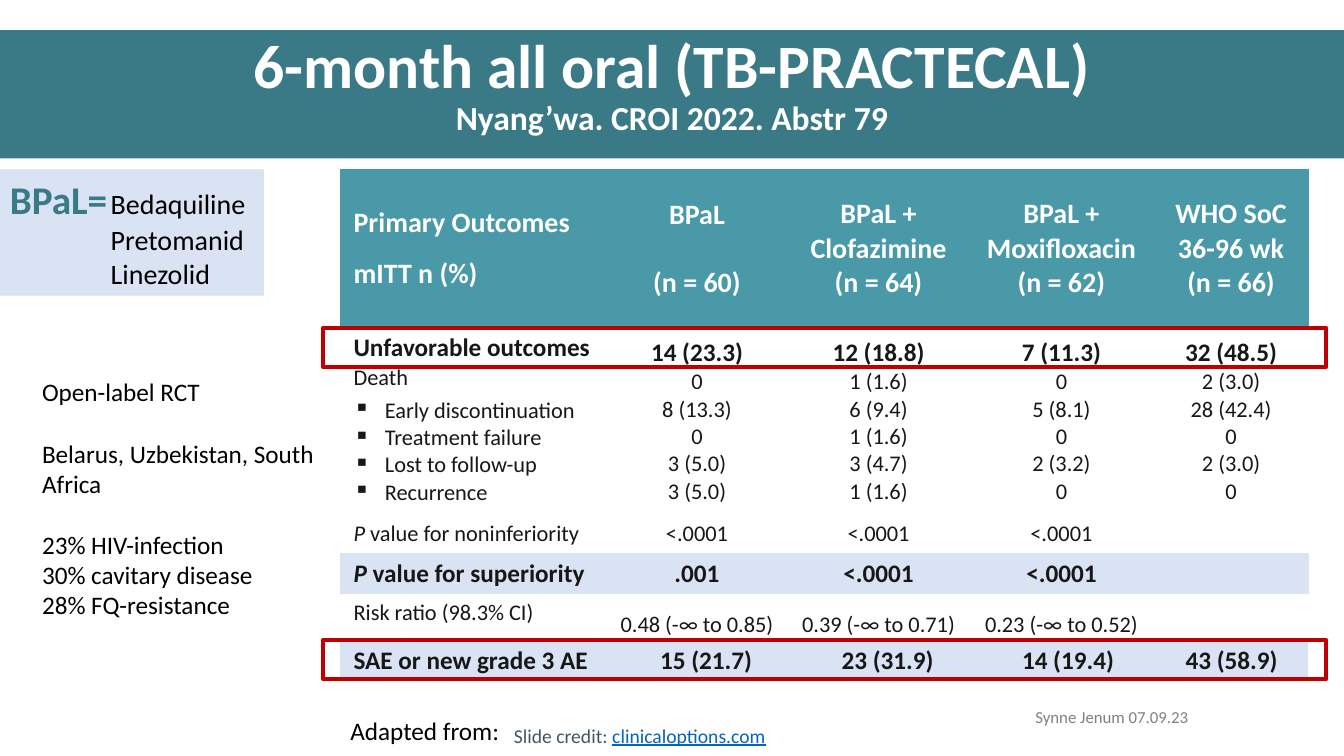
import pptx
import pptx.util
import pptx.dml.color
import pptx.enum.shapes
import pptx.enum.text
from lxml import etree
from pptx.util import Cm, Pt

ALIGN = pptx.enum.text.PP_ALIGN
ANCHOR = pptx.enum.text.MSO_ANCHOR
RECTANGLE = pptx.enum.shapes.MSO_SHAPE.RECTANGLE
COLORS = {
    "banner": "3A7986", "header": "4999A9", "band": "DAE3F3", "frame": "C00000",
    "white": "FFFFFF", "black": "000000", "ink": "181717", "slate": "455560",
    "link": "0563C1", "grey": "808080",
}
NO_TABLE_STYLE = "{2D5ABB26-0587-4C30-8999-92F81FD0307C}"


def rgb(name):
    return pptx.dml.color.RGBColor.from_string(COLORS[name])


def add_property(paragraph, tag, **attributes):
    return etree.SubElement(paragraph._p.get_or_add_pPr(), pptx.oxml.ns.qn(tag), attributes)


def set_bullet(paragraph):
    properties = paragraph._p.get_or_add_pPr()
    properties.set("marL", str(Cm(0.79)))
    properties.set("indent", str(-Cm(0.79)))
    add_property(paragraph, "a:buChar", char="▪")


def set_tab(paragraph, position):
    tabs = add_property(paragraph, "a:tabLst")
    etree.SubElement(tabs, pptx.oxml.ns.qn("a:tab"), pos=str(position), algn="l")


class OutcomeSlide:
    font = "Calibri"

    def __init__(self, presentation):
        self.slide = presentation.slides.add_slide(presentation.slide_layouts[6])

    def add_lines(self, frame, lines, align=ALIGN.LEFT, gaps=None, **style):
        """Each line is a string or a list of (text, style changes); gaps maps line index to points before."""
        for index, line in enumerate(lines):
            paragraph = frame.paragraphs[0] if index == 0 else frame.add_paragraph()
            paragraph.alignment = align
            if gaps and index in gaps:
                paragraph.space_before = Pt(gaps[index])
            for text, changes in [(line, {})] if isinstance(line, str) else line:
                run = paragraph.add_run()
                run.text = text
                self.format_run(run, **{**style, **changes})

    def format_run(self, run, size, color, bold=False, italic=False, underline=False):
        run.font.name = self.font
        run.font.size = Pt(size)
        run.font.color.rgb = rgb(color)
        run.font.bold = bold
        run.font.italic = italic
        run.font.underline = underline

    def text(self, place, lines, wrap=True, anchor=ANCHOR.TOP, **style):
        frame = self.slide.shapes.add_textbox(*map(Cm, place)).text_frame
        frame.word_wrap = wrap
        frame.vertical_anchor = anchor
        self.add_lines(frame, lines, **style)

    def panel(self, place, fill, anchor):
        """Filled rectangle; returns its text frame."""
        shape = self.slide.shapes.add_shape(RECTANGLE, *map(Cm, place))
        shape.shadow.inherit = False
        shape.fill.solid()
        shape.fill.fore_color.rgb = rgb(fill)
        shape.line.fill.background()
        shape.text_frame.word_wrap = True
        shape.text_frame.vertical_anchor = anchor
        return shape.text_frame

    def highlight(self, top):
        shape = self.slide.shapes.add_shape(RECTANGLE, Cm(8.15), Cm(top), Cm(25.27), Cm(0.99))
        shape.shadow.inherit = False
        shape.fill.background()
        shape.line.color.rgb = rgb("frame")
        shape.line.width = Pt(3)

    def table(self, top, widths, heights):
        table = self.slide.shapes.add_table(
            len(heights), len(widths), Cm(8.58), Cm(top), Cm(sum(widths)), Cm(sum(heights))).table
        table.first_row = table.horz_banding = False
        table._tbl.tblPr.find(pptx.oxml.ns.qn("a:tableStyleId")).text = NO_TABLE_STYLE
        for column, width in zip(table.columns, widths):
            column.width = Cm(width)
        for row, height in zip(table.rows, heights):
            row.height = Cm(height)
        return table

    def cell(self, cell, lines, fill=None, anchor=ANCHOR.MIDDLE, align=ALIGN.CENTER, **style):
        cell.margin_left = cell.margin_right = Cm(0.33)
        cell.margin_top = cell.margin_bottom = Cm(0.13 if lines else 0)
        cell.vertical_anchor = anchor
        if fill:
            cell.fill.solid()
            cell.fill.fore_color.rgb = rgb(fill)
        else:
            cell.fill.background()
        self.add_lines(cell.text_frame, lines, align, **style)

    def row(self, table, index, label, values, fill=None, **style):
        """Row with a top-left label and centred values."""
        self.cell(table.cell(index, 0), [label], fill, ANCHOR.TOP, ALIGN.LEFT, **style)
        for column, value in enumerate(values, 1):
            self.cell(table.cell(index, column), [value] if value else [], fill, **style)


def add_outcomes(page):
    table = page.table(4.27, [6.71, 4.55, 4.6, 4.62, 3.93], [3.99, 4.72, 0.94, 1.02, 1.57])
    heading = dict(fill="header", size=20, color="white", bold=True)
    page.cell(table.cell(0, 0), ["Primary Outcomes", "mITT n (%)"],
              align=ALIGN.LEFT, gaps={1: 12}, **heading)
    arms = [
        ["BPaL", "(n = 60)"],
        ["BPaL +", "Clofazimine", "(n = 64)"],
        ["BPaL +", "Moxifloxacin", "(n = 62)"],
        ["WHO SoC 36-96 wk", "(n = 66)"],
    ]
    for column, arm in enumerate(arms, 1):
        page.cell(table.cell(0, column), arm, gaps={1: 24} if column == 1 else None, **heading)

    plain = dict(size=16, color="ink")
    strong = dict(size=18, color="ink", bold=True)
    reasons = table.cell(1, 0)
    page.cell(reasons, [
        [("Unfavorable outcomes ", strong), ("Death", {})],
        "Early discontinuation", "Treatment failure", "Lost to follow-up", "Recurrence",
    ], anchor=ANCHOR.TOP, align=ALIGN.LEFT, gaps={1: 4}, **plain)
    for paragraph in reasons.text_frame.paragraphs[1:]:
        set_bullet(paragraph)
    counts = [
        ["14 (23.3)", "0", "8 (13.3)", "0", "3 (5.0)", "3 (5.0)"],
        ["12 (18.8)", "1 (1.6)", "6 (9.4)", "1 (1.6)", "3 (4.7)", "1 (1.6)"],
        ["7 (11.3)", "0", "5 (8.1)", "0", "2 (3.2)", "0"],
        ["32 (48.5)", "2 (3.0)", "28 (42.4)", "0", "2 (3.0)", "0"],
    ]
    for column, (total, *parts) in enumerate(counts, 1):
        page.cell(table.cell(1, column), [[(total, strong)], *parts], **plain)

    p_symbol = ("P", {"italic": True})
    page.row(table, 2, [p_symbol, (" value for noninferiority", {})], ["<.0001"] * 3 + [""], **plain)
    page.row(table, 3, [p_symbol, (" value for superiority", {})],
             [".001", "<.0001", "<.0001", ""], "band", **strong)
    page.row(table, 4, "Risk ratio (98.3% CI)",
             ["0.48 (-∞ to 0.85)", "0.39 (-∞ to 0.71)", "0.23 (-∞ to 0.52)", ""], **plain)
    page.highlight(8.26)

    safety = page.table(16.13, [6.99, 4.45, 4.7, 4.39, 3.86], [1.02])
    page.row(safety, 0, "SAE or new grade 3 AE",
             ["15 (21.7)", "23 (31.9)", "14 (19.4)", "43 (58.9)"], "band", **strong)
    page.highlight(16.13)


def main():
    presentation = pptx.Presentation()
    presentation.slide_width, presentation.slide_height = Cm(33.87), Cm(19.05)
    page = OutcomeSlide(presentation)

    title = page.panel((0, 0.76, 33.87, 3.23), "banner", ANCHOR.TOP).paragraphs[0]
    title.text = "6-month all oral (TB-PRACTECAL)\vNyang’wa. CROI 2022. Abstr 79"
    title.alignment = ALIGN.CENTER
    title.line_spacing = 0.9
    for run, size in zip(title.runs, (44, 24)):
        page.format_run(run, size, "white", bold=True)

    add_outcomes(page)

    regimen = page.panel((0, 4.27, 6.65, 3.18), "band", ANCHOR.MIDDLE)
    page.add_lines(regimen, [
        [("BPaL=\t", dict(size=28, color="banner", bold=True)), ("Bedaquiline", {})],
        "\tPretomanid", "\tLinezolid",
    ], size=20, color="black")
    for paragraph in regimen.paragraphs:
        set_tab(paragraph, Cm(2.54))

    page.text((0.81, 9.37, 7.37, 6.4), [
        "Open-label RCT", "Belarus, Uzbekistan, South Africa",
        "23% HIV-infection", "30% cavitary disease", "28% FQ-resistance",
    ], gaps={1: 22, 2: 22}, size=18, color="black")
    page.text((8.58, 17.91, 5.33, 1.02), ["Adapted from:"], size=18, color="black")
    page.text((12.7, 18.11, 6.91, 0.86), [[
        ("Slide credit: ", {}), ("clinicaloptions.com", dict(color="link", underline=True)),
    ]], wrap=False, size=14, color="slate")
    page.text((12.95, 17.55, 17.25, 1.02), ["Synne Jenum 07.09.23"],
              anchor=ANCHOR.MIDDLE, align=ALIGN.RIGHT, size=12, color="grey")

    presentation.save("out.pptx")


if __name__ == "__main__":
    main()
